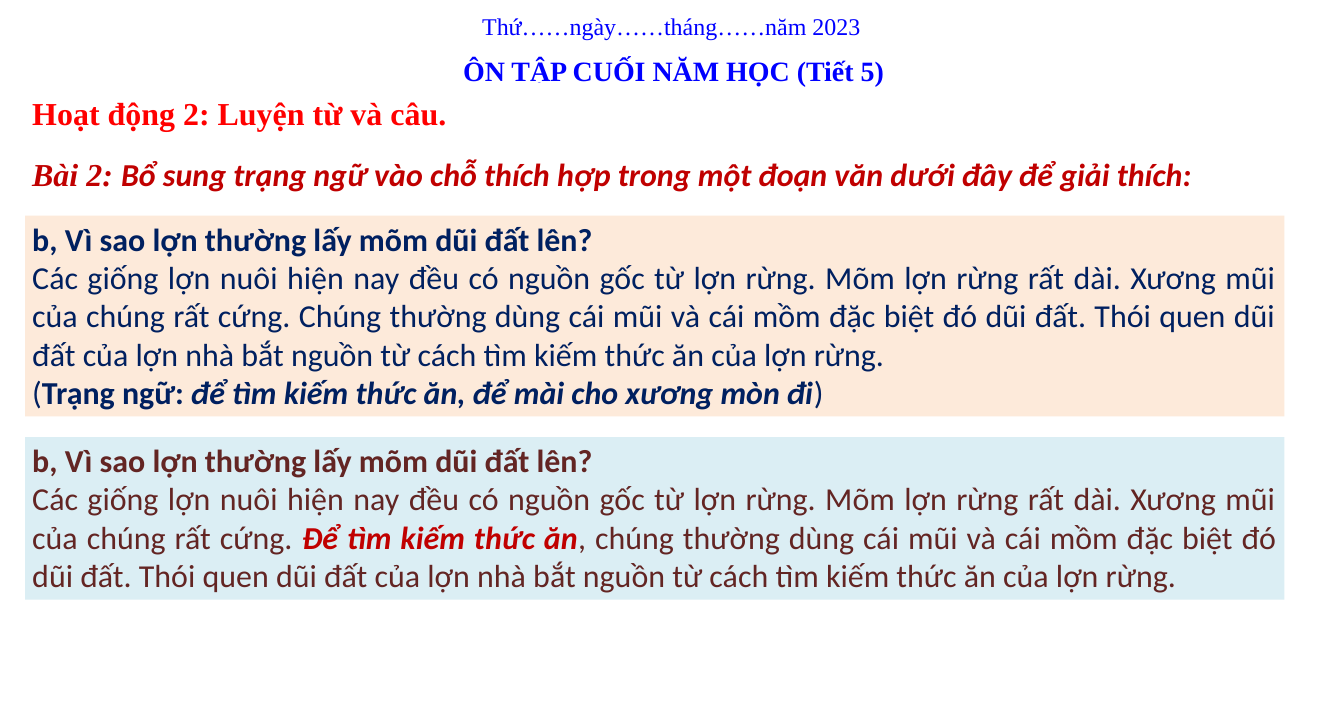
from pptx import Presentation
from pptx.dml.color import RGBColor as Rgb
from pptx.enum.shapes import MSO_SHAPE as Shape
from pptx.enum.text import MSO_ANCHOR as Anchor, MSO_AUTO_SIZE as Fit, PP_ALIGN as Align
from pptx.util import Inches, Pt

TIMES = "Times New Roman"
LEFT = 0.35
ASK = "b, Vì sao lợn thường lấy mõm dũi đất lên?"
START = ("Các giống lợn nuôi hiện nay đều có nguồn gốc từ lợn rừng. "
         "Mõm lợn rừng rất dài. Xương mũi của chúng rất cứng. ")
END = ("thường dùng cái mũi và cái mồm đặc biệt đó dũi đất. Thói quen dũi đất "
       "của lợn nhà bắt nguồn từ cách tìm kiếm thức ăn của lợn rừng.")


def paint(color):
    """Turn a hex string into a colour."""
    return Rgb.from_string(color)


def add_run(para, text, size=32, face="Calibri", color="000000", bold=False, slant=False):
    """Add formatted text to a paragraph."""
    run = para.add_run()
    run.text = text
    font = run.font
    font.size, font.name, font.bold, font.italic = Pt(size), face, bold, slant
    font.color.rgb = paint(color)


def add_box(slide, box, paras, fill=None, align=Align.LEFT, wrap=True, space=None):
    """Place paragraphs, each a list of (text, format) runs, in a box."""
    area = [Inches(n) for n in box]
    if fill:
        shape = slide.shapes.add_shape(Shape.RECTANGLE, *area)
        shape.shadow.inherit = False
        shape.fill.solid()
        shape.fill.fore_color.rgb = paint(fill)
        shape.line.fill.background()
    else:
        shape = slide.shapes.add_textbox(*area)
    frame = shape.text_frame
    frame.word_wrap = wrap
    frame.auto_size = Fit.SHAPE_TO_FIT_TEXT
    frame.vertical_anchor = Anchor.TOP
    for i, runs in enumerate(paras):
        para = frame.add_paragraph() if i else frame.paragraphs[0]
        para.alignment = align
        if space:
            para.line_spacing = space
        for text, style in runs:
            add_run(para, text, **style)


def add_head(slide, left, top, width):
    """Place the date line and the lesson title."""
    blue = dict(face=TIMES, color="0000FF")
    add_box(slide, (left + 0.3, top, width - 0.61, 0.5),
            [[("Thứ……ngày……tháng……năm 2023", dict(blue, size=24))]], wrap=False)
    add_box(slide, (left, top + 0.58, width, 0.57),
            [[("ÔN TẬP CUỐI NĂM HỌC (Tiết 5)", dict(blue, size=28, bold=True))]],
            align=Align.CENTER, wrap=False)


def add_task(slide, left, top, width):
    """Place the activity heading and the exercise prompt."""
    add_box(slide, (left, top, 7.33, 0.69),
            [[("Hoạt động 2: Luyện từ và câu.", dict(face=TIMES, color="FF0000", bold=True))]],
            fill="FFFFFF", align=Align.JUSTIFY, space=1.2)
    style = dict(color="C00000", bold=True, slant=True)
    add_box(slide, (left, top + 0.95, width, 0.64),
            [[("Bài 2: ", dict(style, face=TIMES)),
              ("Bổ sung trạng ngữ vào chỗ thích hợp trong một đoạn văn dưới đây "
               "để giải thích:", style)]])


def add_panel(slide, box, fill, color, *paras):
    """Place a filled panel with the question above its paragraphs."""
    rows = [[(ASK, dict(bold=True))], *paras]
    rows = [[(text, {"color": color, **style}) for text, style in row] for row in rows]
    add_box(slide, box, rows, fill=fill, align=Align.JUSTIFY)


def main():
    """Build and save the slide."""
    deck = Presentation()
    deck.slide_width, deck.slide_height = Inches(18.7), Inches(10)
    slide = deck.slides.add_slide(deck.slide_layouts[6])
    strong = dict(bold=True, slant=True)
    add_head(slide, 6.31, 0.11, 6.12)
    add_task(slide, LEFT, 1.15, 18)
    add_panel(slide, (LEFT, 3, 17.52, 2.79), "FDEADA", "002060",
              [(START + "Chúng " + END, {})],
              [("(", {}), ("Trạng ngữ: ", dict(bold=True)),
               ("để tìm kiếm thức ăn, để mài cho xương mòn đi", strong), (")", {})])
    add_panel(slide, (LEFT, 6.08, 17.52, 2.26), "DBEEF4", "632523",
              [(START, {}), ("Để tìm kiếm thức ăn", dict(strong, color="C00000")),
               (", chúng " + END, {})])
    deck.save("out.pptx")


if __name__ == "__main__":
    main()
